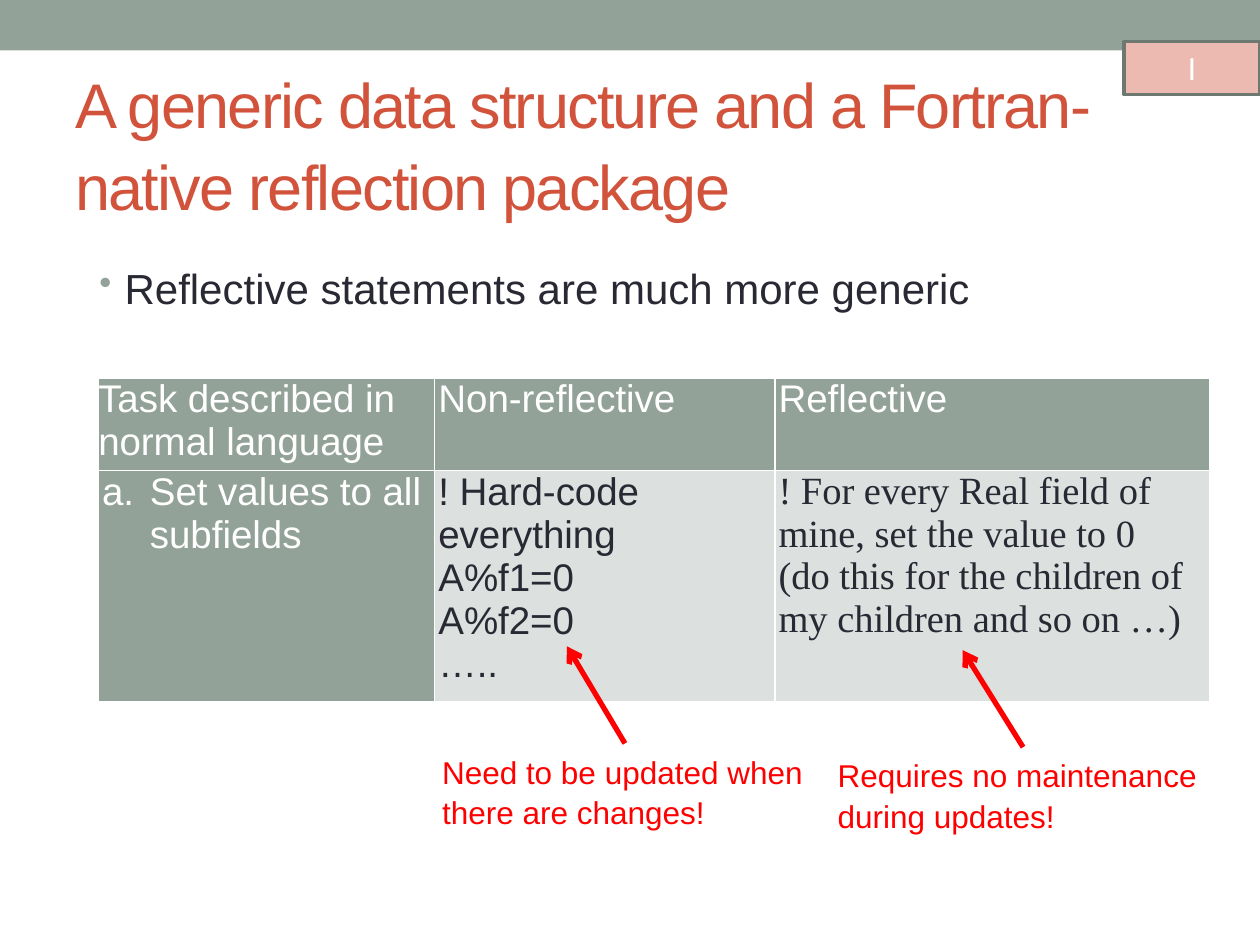
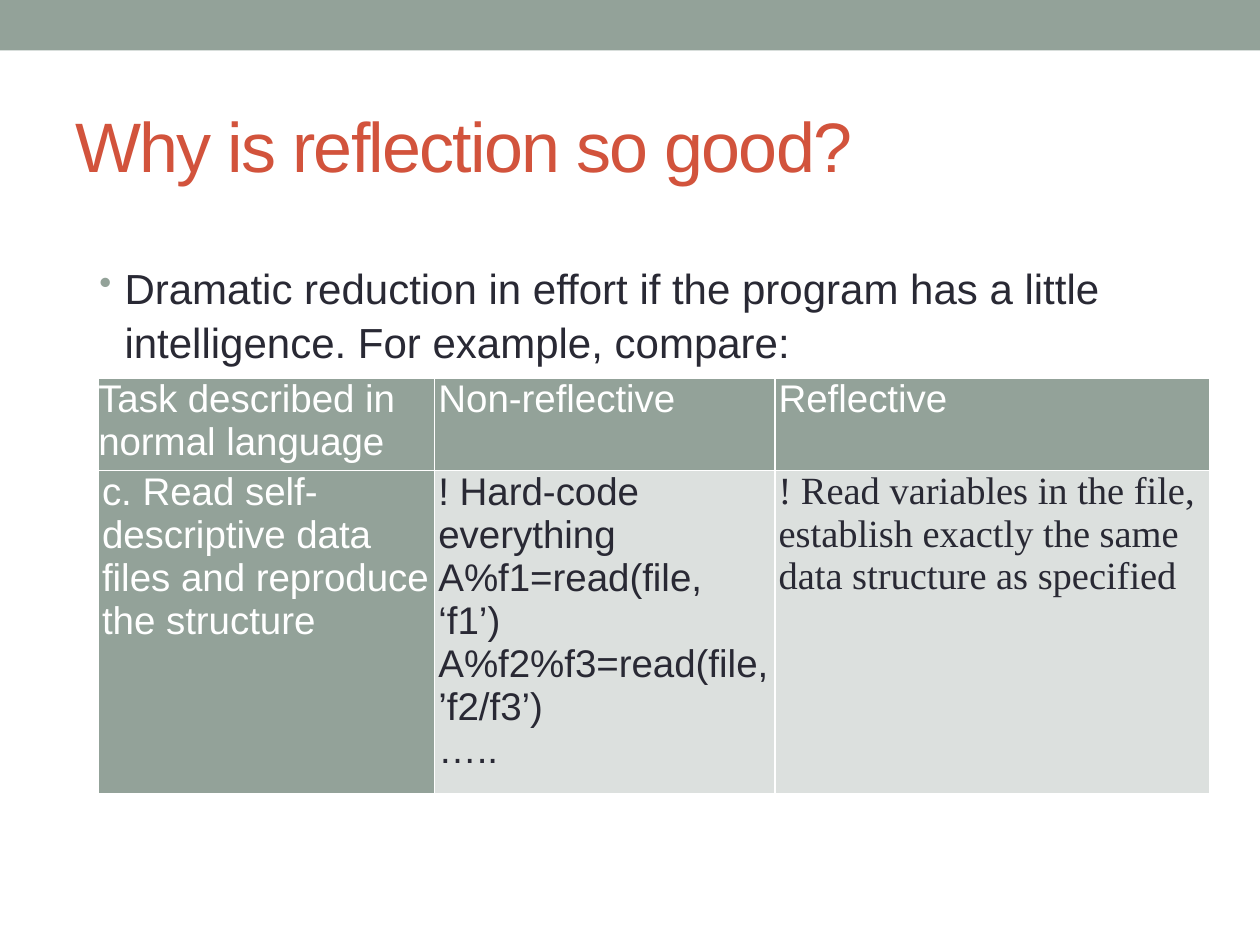
from pptx import Presentation, util as u
from pptx.dml.color import RGBColor
from pptx.enum import shapes, text
from pptx.oxml import parse_xml
from pptx.oxml.ns import nsdecls

SAGE = RGBColor(0x93, 0xA2, 0x99)
RUST = RGBColor(0xD2, 0x53, 0x3C)
PINK = RGBColor(0xED, 0xBA, 0xB1)
EDGE = RGBColor(0x6D, 0x78, 0x71)
INK = RGBColor(0x29, 0x29, 0x34)
PALE = RGBColor(0xDC, 0xE0, 0xDE)
RED = RGBColor(0xFF, 0, 0)
WHITE = RGBColor(0xFF, 0xFF, 0xFF)
SANS, SERIF = "Arial", "Times New Roman"
WIDE, HIGH = 10, 7.5
LEAD = 1.08  # line spacing outside tables
COLS, ROWS = (2.67, 2.7, 3.45), (0.7, 1.41)
HEADS = ["Task described in normal language", "Non-reflective", "Reflective"]
DOT = [f'<a:buClr {{}}><a:srgbClr val="{SAGE}"/></a:buClr>',
       '<a:buSzPct {} val="85000"/>', '<a:buChar {} char="•"/>']
ALPHA = ['<a:buFont {} typeface="+mj-lt"/>', '<a:buAutoNum {} type="alphaLcPeriod"/>']


def add(parent, xml):
    parent.append(parse_xml(xml.format(nsdecls("a"))))


def style(par, size, color, face=SANS):
    font = par.font
    font.name, font.size, font.color.rgb = face, u.Pt(size), color


def indent(par, inch, marks):
    props = par._p.get_or_add_pPr()
    props.set("marL", str(u.Inches(inch)))
    props.set("indent", str(-u.Inches(inch)))
    for mark in marks:
        add(props, mark)


def label(slide, box, words, size, color, wrap=True, marks=None):
    shape = slide.shapes.add_textbox(*map(u.Inches, box))
    frame = shape.text_frame
    frame.word_wrap = wrap
    par = frame.paragraphs[0]
    par.text = words
    if marks:
        indent(par, 0.2, marks)
    par.line_spacing = LEAD
    style(par, size, color)
    return shape


def block(slide, box, fill, line=None):
    shape = slide.shapes.add_shape(shapes.MSO_SHAPE.RECTANGLE, *map(u.Inches, box))
    shape.shadow.inherit = False
    shape.fill.solid()
    shape.fill.fore_color.rgb = fill
    if line:
        shape.line.color.rgb, shape.line.width = line, u.Pt(2)
    else:
        shape.line.fill.background()
    return shape


def badge(slide, words):
    shape = block(slide, (8.92, 0.33, 1.08, 0.42), PINK, EDGE)
    shape.text_frame.vertical_anchor = text.MSO_ANCHOR.MIDDLE
    par = shape.text_frame.paragraphs[0]
    par.text, par.alignment = words, text.PP_ALIGN.CENTER
    style(par, 18, WHITE)


def cell(item, lines, fill, color, face=SANS, pad=0.03, marks=None):
    item.margin_left = item.margin_right = u.Inches(pad)
    item.margin_top = item.margin_bottom = 0
    props = item._tc.get_or_add_tcPr()
    for side in "LRTB":
        add(props, f'<a:ln{side} {{}} w="12700"><a:solidFill>'
                   f'<a:srgbClr val="{WHITE}"/></a:solidFill></a:ln{side}>')
    item.fill.solid()
    item.fill.fore_color.rgb = fill
    item.text = "\n".join(lines)
    for par in item.text_frame.paragraphs:
        if marks:
            indent(par, 0.38, marks)
        style(par, 22, color, face)


def compare(slide, task, code, prose, marks=None):
    """Table that sets plain code against the reflective way."""
    grid = slide.shapes.add_table(2, 3, *map(u.Inches, (0.78, 3, sum(COLS), sum(ROWS)))).table
    for col, width in zip(grid.columns, COLS):
        col.width = u.Inches(width)
    for row, height in zip(grid.rows, ROWS):
        row.height = u.Inches(height)
    for n, head in enumerate(HEADS):
        cell(grid.cell(0, n), [head], SAGE, WHITE, pad=0.03 if n else 0)
    cell(grid.cell(1, 0), [task], SAGE, WHITE, marks=marks)
    cell(grid.cell(1, 1), ["! Hard-code everything", *code, "….."], PALE, INK)
    cell(grid.cell(1, 2), prose, PALE, INK, SERIF)


def note(slide, left, top, width, words, start, end):
    """Red remark with an arrow up into the table."""
    label(slide, (left, top, width, 0.71), words, 18, RED, wrap=False)
    ends = (start, top, end, top - 0.77)
    arrow = slide.shapes.add_connector(shapes.MSO_CONNECTOR.STRAIGHT, *map(u.Inches, ends))
    arrow.line.color.rgb, arrow.line.width = RED, u.Pt(3)
    add(arrow.line._get_or_add_ln(), '<a:tailEnd {} type="arrow"/>')
    add(arrow._element.spPr, '<a:effectLst {}/>')


def page(deck, title, size, point):
    """Slide with top band, title and one bullet."""
    slide = deck.slides.add_slide(deck.slide_layouts[6])
    block(slide, (0, 0, WIDE, 0.4), SAGE)
    head = label(slide, (0.5, 0.58, 0.9 * WIDE, 1.08), title, size, RUST)
    head.text_frame.vertical_anchor = text.MSO_ANCHOR.MIDDLE
    run = head.text_frame.paragraphs[0].runs[0]
    run._r.get_or_add_rPr().set("spc", "-100")
    label(slide, (0.69, 2, 8.78, 4.76), point, 24, INK, marks=DOT)
    return slide


def main():
    deck = Presentation()
    deck.slide_width, deck.slide_height = u.Inches(WIDE), u.Inches(HIGH)

    # Setting values
    slide = page(deck, "A generic data structure and a Fortran-native reflection package",
                 36, "Reflective statements are much more generic")
    badge(slide, "I")
    compare(slide, "Set values to all subfields", ["A%f1=0", "A%f2=0"],
            ["! For every Real field of mine, set the value to 0",
             "(do this for the children of my children and so on …)"], ALPHA)
    note(slide, 3.41, 5.9, 3.09, "Need to be updated when\nthere are changes!", 4.96, 4.5)
    note(slide, 6.55, 5.93, 3.15, "Requires no maintenance\nduring updates!", 8.12, 7.64)

    # Reading files
    slide = page(deck, "Why is reflection so good?", 40,
                 "Dramatic reduction in effort if the program has a little "
                 "intelligence. For example, compare:")
    compare(slide, "c. Read self-descriptive data files and reproduce the structure",
            ["A%f1=read(file, ‘f1’)", "A%f2%f3=read(file,’f2/f3’)"],
            ["! Read variables in the file, establish exactly the same "
             "data structure as specified"])
    deck.save("out.pptx")


if __name__ == "__main__":
    main()
